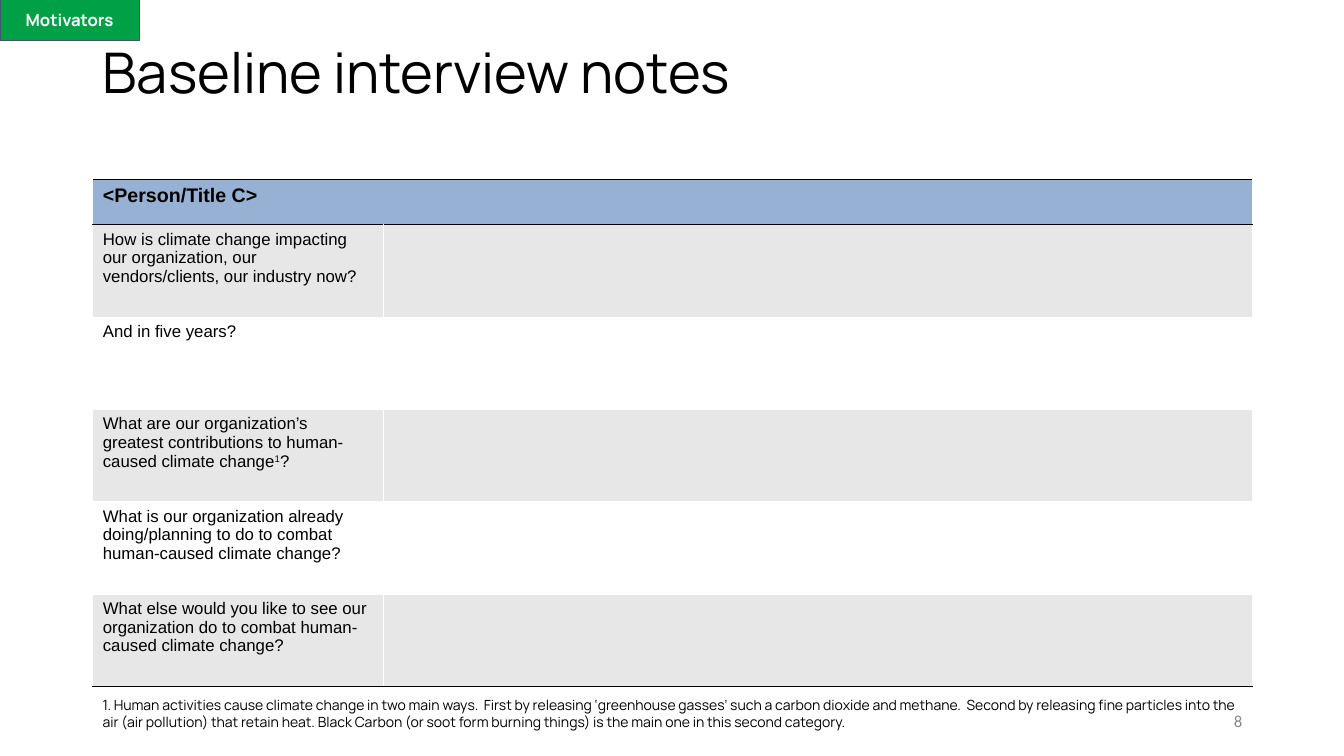
from dataclasses import dataclass

import lxml.etree
import pptx
import pptx.dml.color
import pptx.enum.shapes
import pptx.enum.text
import pptx.oxml.ns
import pptx.util

Inches = pptx.util.Inches
Align = pptx.enum.text.PP_ALIGN
Anchor = pptx.enum.text.MSO_ANCHOR


@dataclass(frozen=True)
class TextStyle:
    font: str
    size: float
    color: str
    bold: bool = False


@dataclass(frozen=True)
class Theme:
    black: str = "000000"
    white: str = "FFFFFF"
    header_fill: str = "97B1D5"
    band_fill: str = "E7E7E7"
    tag_fill: str = "00A047"
    tag_line: str = "44546A"
    title: TextStyle = TextStyle("Manrope", 40, "000000")
    tag: TextStyle = TextStyle("Manrope", 12, "FFFFFF", True)
    header: TextStyle = TextStyle("Arial", 14, "000000", True)
    question: TextStyle = TextStyle("Arial", 12, "000000")
    footnote: TextStyle = TextStyle("Manrope", 10, "000000")
    page: TextStyle = TextStyle("Calibri", 12, "888888")


@dataclass(frozen=True)
class Run:
    text: str
    superscript: bool = False


@dataclass(frozen=True)
class TextBox:
    left: float
    top: float
    width: float
    height: float
    text: str
    style: TextStyle
    align: Align = Align.LEFT
    anchor: Anchor = Anchor.TOP
    spacing: float = 1.0
    grows: bool = False


THEME = Theme()
MARGIN, CONTENT_WIDTH = 0.92, 11.5
TABLE_TOP, TABLE_HEIGHT, HEADER_HEIGHT = 1.78, 5.03, 0.45
QUESTION_WIDTH = 2.88

TEXT_BOXES = [
    TextBox(MARGIN, 0.4, CONTENT_WIDTH, 1.45, "Baseline interview notes",
            THEME.title, spacing=0.9),
    TextBox(9.42, 6.95, 3, 0.4, "8", THEME.page, Align.RIGHT, Anchor.MIDDLE),
    TextBox(MARGIN, 6.86, CONTENT_WIDTH, 0.44,
            "1. Human activities cause climate change in two main ways.  "
            "First by releasing ‘greenhouse gasses’ such a carbon dioxide and methane.  "
            "Second by releasing fine particles into the air (air pollution) that retain heat. "
            "Black Carbon (or soot form burning things) is the main one in this second category.",
            THEME.footnote, grows=True),
]

QUESTIONS = [
    [Run("How is climate change impacting our organization, "
         "our vendors/clients, our industry now?")],
    [Run("And in five years?")],
    [Run("What are our organization’s greatest contributions to human-caused climate change"),
     Run("1", superscript=True), Run("?")],
    [Run("What is our organization already doing/planning to do "
         "to combat human-caused climate change?")],
    [Run("What else would you like to see our organization do "
         "to combat human-caused climate change?")],
]


def rgb(color: str) -> pptx.dml.color.RGBColor:
    return pptx.dml.color.RGBColor.from_string(color)


def write_runs(paragraph, runs: list[Run], style: TextStyle) -> None:
    for item in runs:
        run = paragraph.add_run()
        run.text = item.text
        run.font.name = style.font
        run.font.size = pptx.util.Pt(style.size)
        run.font.bold = style.bold
        run.font.color.rgb = rgb(style.color)
        if item.superscript:
            run._r.get_or_add_rPr().set("baseline", "30000")


def add_text_box(slide, box: TextBox) -> None:
    shape = slide.shapes.add_textbox(
        Inches(box.left), Inches(box.top), Inches(box.width), Inches(box.height))
    frame = shape.text_frame
    frame.word_wrap = True
    frame.vertical_anchor = box.anchor
    if box.grows:
        frame.auto_size = pptx.enum.text.MSO_AUTO_SIZE.SHAPE_TO_FIT_TEXT
    paragraph = frame.paragraphs[0]
    paragraph.alignment = box.align
    paragraph.line_spacing = box.spacing
    write_runs(paragraph, [Run(box.text)], box.style)


def add_tag(slide) -> None:
    tag = slide.shapes.add_shape(
        pptx.enum.shapes.MSO_SHAPE.RECTANGLE, 0, 0, Inches(1.38), Inches(0.4))
    tag.shadow.inherit = False
    tag.fill.solid()
    tag.fill.fore_color.rgb = rgb(THEME.tag_fill)
    tag.line.color.rgb = rgb(THEME.tag_line)
    tag.line.width = pptx.util.Pt(0.75)
    tag.text_frame.vertical_anchor = Anchor.MIDDLE
    paragraph = tag.text_frame.paragraphs[0]
    paragraph.alignment = Align.CENTER
    write_runs(paragraph, [Run("Motivators")], THEME.tag)


def style_cell(cell, fill: str, top: str, bottom: str) -> None:
    cell.fill.solid()
    cell.fill.fore_color.rgb = rgb(fill)
    properties = cell._tc.get_or_add_tcPr()
    borders = {"a:lnL": THEME.white, "a:lnR": THEME.white, "a:lnT": top, "a:lnB": bottom}
    # Border lines must come before the cell fill
    for position, (tag, color) in enumerate(borders.items()):
        line = lxml.etree.Element(pptx.oxml.ns.qn(tag), w=str(pptx.util.Pt(0.5)))
        solid = lxml.etree.SubElement(line, pptx.oxml.ns.qn("a:solidFill"))
        lxml.etree.SubElement(solid, pptx.oxml.ns.qn("a:srgbClr"), val=color)
        properties.insert(position, line)


def add_interview_table(slide) -> None:
    row_count = len(QUESTIONS) + 1
    table = slide.shapes.add_table(
        row_count, 2, Inches(MARGIN), Inches(TABLE_TOP),
        Inches(CONTENT_WIDTH), Inches(TABLE_HEIGHT)).table
    table.first_row = False
    table.horz_banding = False
    table.columns[0].width = Inches(QUESTION_WIDTH)
    table.columns[1].width = Inches(CONTENT_WIDTH - QUESTION_WIDTH)

    # Header across both columns
    table.rows[0].height = Inches(HEADER_HEIGHT)
    for cell in table.rows[0].cells:
        style_cell(cell, THEME.header_fill, THEME.black, THEME.black)
    table.cell(0, 0).merge(table.cell(0, 1))
    write_runs(table.cell(0, 0).text_frame.paragraphs[0],
               [Run("<Person/Title C>")], THEME.header)

    # Banded question rows with an empty answer cell
    for index, runs in enumerate(QUESTIONS, start=1):
        row = table.rows[index]
        row.height = Inches((TABLE_HEIGHT - HEADER_HEIGHT) / len(QUESTIONS))
        fill = THEME.band_fill if index % 2 else THEME.white
        top = THEME.black if index == 1 else THEME.white
        bottom = THEME.black if index == row_count - 1 else THEME.white
        for cell in row.cells:
            style_cell(cell, fill, top, bottom)
        write_runs(table.cell(index, 0).text_frame.paragraphs[0], runs, THEME.question)


def main() -> None:
    presentation = pptx.Presentation()
    presentation.slide_width = Inches(13.33)
    presentation.slide_height = Inches(7.5)
    slide = presentation.slides.add_slide(presentation.slide_layouts[6])

    # Title, page number and footnote
    for box in TEXT_BOXES:
        add_text_box(slide, box)
    add_interview_table(slide)
    add_tag(slide)
    presentation.save("out.pptx")


if __name__ == "__main__":
    main()
